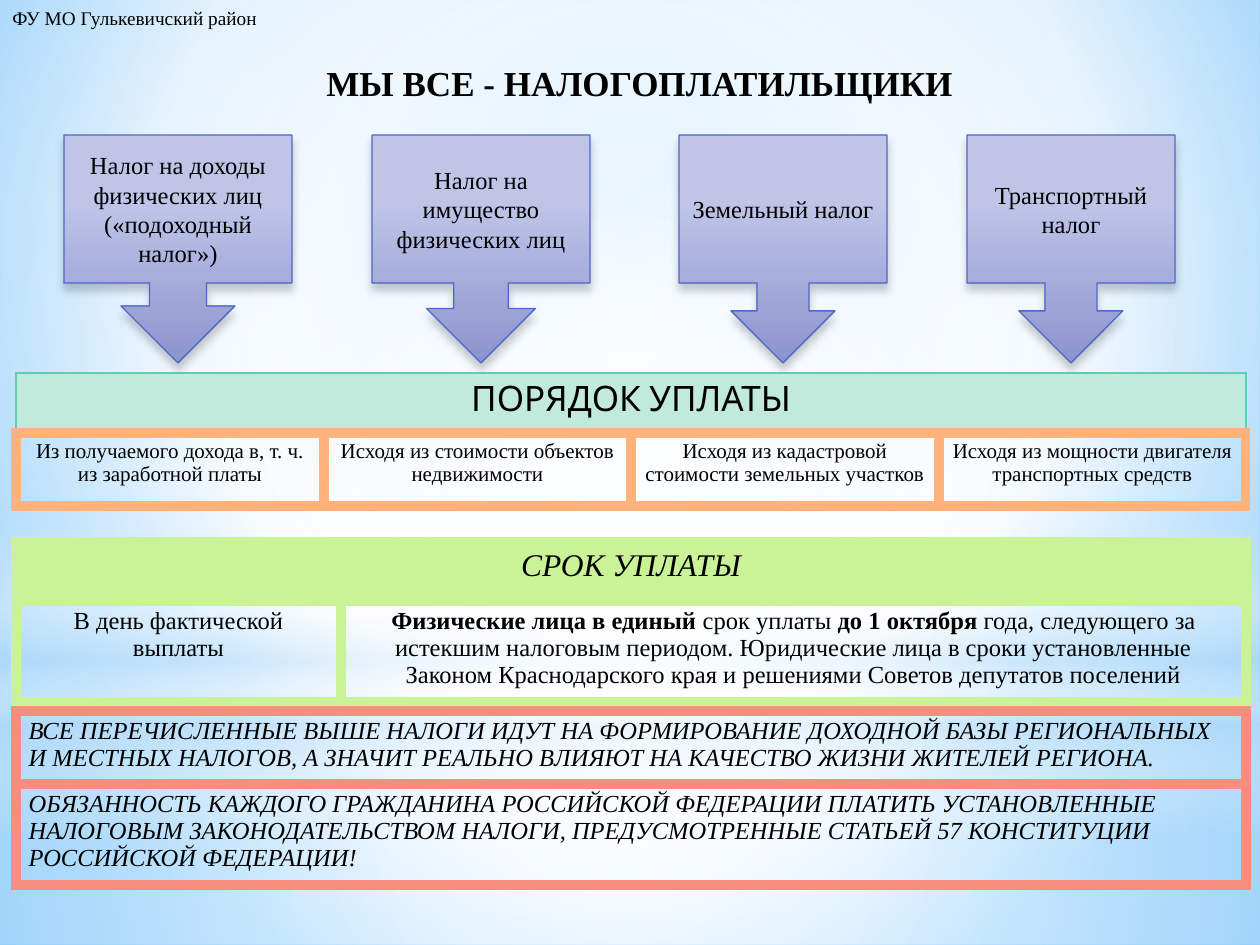
from dataclasses import dataclass
from typing import Any, NamedTuple

from pptx import Presentation
from pptx.dml.color import RGBColor as Rgb
from pptx.enum.shapes import MSO_SHAPE as Kind
from pptx.enum.text import MSO_ANCHOR as Anchor, MSO_AUTO_SIZE as Auto, PP_ALIGN as Align
from pptx.oxml import parse_xml
from pptx.oxml.ns import nsdecls, qn
from pptx.util import Emu, Pt


@dataclass(frozen=True)
class Theme:
    serif: str = "Times New Roman"
    sans: str = "Karla"
    ink: str = "000000"
    edge: str = "4E67C8"
    mint: str = "C1EADC"
    teal: str = "5DCEAF"
    peach: str = "FFB37A"
    lime: str = "CAF297"
    coral: str = "F78D7C"
    head: int = 20
    term: int = 18
    body: int = 14
    small: int = 12
    note: int = 11


T = Theme()
SCALE = 914400 / 126
LEFT, WIDE = 16, 1230


class Box(NamedTuple):
    x: int
    y: int
    w: int
    h: int


class Stop(NamedTuple):
    at: int
    color: str
    alpha: int = 100


class Layer(NamedTuple):
    kind: Any
    box: Box
    stops: list[Stop]
    way: str


class Tax(NamedTuple):
    x: int
    w: int
    text: str


@dataclass(frozen=True)
class Grid:
    y: int
    cols: list[int]
    rows: list[int]
    texts: list[str]
    edge: str
    line: float = 6
    size: int = T.body
    font: str = T.serif
    fill: str | None = None
    italic: bool = False
    align: Any = Align.CENTER


def px(n: int) -> Emu:
    return Emu(round(n * SCALE))


def place(box: Box) -> list[Emu]:
    return [px(n) for n in box]


def radial(l: int, t: int, r: int, b: int) -> str:
    return (f'<a:path path="circle"><a:fillToRect l="{l}000" t="{t}000" '
            f'r="{r}000" b="{b}000"/></a:path>')


DOWN = '<a:lin ang="5400000" scaled="0"/>'
MID = radial(50, 50, 50, 50)


def blend(root: Any, stops: list[Stop], way: str) -> None:
    marks = "".join(
        f'<a:gs pos="{s.at}000"><a:srgbClr val="{s.color}">'
        f'<a:alpha val="{s.alpha}000"/></a:srgbClr></a:gs>' for s in stops)
    new = parse_xml(f'<a:gradFill {nsdecls("a")} rotWithShape="1">'
                    f'<a:gsLst>{marks}</a:gsLst>{way}</a:gradFill>')
    old = next(root.iter(qn("a:noFill")))
    old.getparent().replace(old, new)


def style(par: Any, size: int, font: str = T.serif, bold: bool | None = None,
          italic: bool = False) -> None:
    par.font.size, par.font.name = Pt(size), font
    par.font.bold, par.font.italic = bold, italic
    par.font.color.rgb = Rgb.from_string(T.ink)


def label(slide: Any, box: Box, text: str, size: int, bold: bool = False) -> None:
    frame = slide.shapes.add_textbox(*place(box)).text_frame
    frame.word_wrap, frame.auto_size = False, Auto.SHAPE_TO_FIT_TEXT
    frame.text = text
    style(frame.paragraphs[0], size, bold=bold)


def paint(slide: Any, layer: Layer) -> Any:
    shape = slide.shapes.add_shape(layer.kind, *place(layer.box))
    shape.shadow.inherit = False
    shape.fill.background()
    blend(shape.element.spPr, layer.stops, layer.way)
    shape.line.fill.background()
    return shape


def callout(slide: Any, tax: Tax) -> None:
    shape = paint(slide, Layer(Kind.DOWN_ARROW_CALLOUT, Box(tax.x, 135, tax.w, 228),
                               [Stop(28, "C0C5E8"), Stop(100, "8C94CE")], DOWN))
    shape.line.color.rgb = Rgb.from_string(T.edge)
    shape.line.width = Pt(0.75)
    shape.element.spPr.find(qn("a:effectLst")).append(parse_xml(
        f'<a:outerShdw {nsdecls("a")} blurRad="63500" dist="50800" dir="5400000" '
        'rotWithShape="0"><a:srgbClr val="000000"><a:alpha val="20000"/>'
        '</a:srgbClr></a:outerShdw>'))
    frame = shape.text_frame
    frame.word_wrap, frame.vertical_anchor = True, Anchor.MIDDLE
    frame.text = tax.text
    frame.paragraphs[0].alignment = Align.CENTER
    style(frame.paragraphs[0], T.body)


def border(cell: Any, color: str, width: float) -> None:
    props = cell._tc.get_or_add_tcPr()
    for i, side in enumerate("LRTB"):
        props.insert(i, parse_xml(
            f'<a:ln{side} {nsdecls("a")} w="{Pt(width)}"><a:solidFill>'
            f'<a:srgbClr val="{color}"/></a:solidFill></a:ln{side}>'))


def table(slide: Any, grid: Grid) -> None:
    box = Box(LEFT, grid.y, sum(grid.cols), sum(grid.rows))
    tab = slide.shapes.add_table(len(grid.rows), len(grid.cols), *place(box)).table
    tab.first_row = tab.horz_banding = False
    for col, w in zip(tab.columns, grid.cols):
        col.width = px(w)
    for row, h in zip(tab.rows, grid.rows):
        row.height = px(h)
    for cell, text in zip(tab.iter_cells(), grid.texts):
        if grid.fill:
            cell.fill.solid()
            cell.fill.fore_color.rgb = Rgb.from_string(grid.fill)
        else:
            cell.fill.background()
        border(cell, grid.edge, grid.line)
        par = cell.text_frame.paragraphs[0]
        par.alignment = grid.align
        style(par, grid.size, grid.font, italic=grid.italic)
        for i, part in enumerate(text.split("*")):
            if part:
                run = par.add_run()
                run.text, run.font.bold = part, i % 2 == 1


LAYERS = [
    Layer(Kind.RECTANGLE, Box(0, 703, 1260, 242),
          [Stop(0, "FFFFFF", 91), Stop(37, "FFFFFF", 76), Stop(100, "B4DCFA", 79)], MID),
    Layer(Kind.RECTANGLE, Box(0, 0, 1260, 703),
          [Stop(0, "FFFFFF", 89), Stop(48, "FFFFFF", 62), Stop(100, "B4DCFA", 79)], MID),
    Layer(Kind.RECTANGLE, Box(0, 519, 1260, 315),
          [Stop(0, "FFFFFF", 0), Stop(29, "FFFFFF", 30), Stop(45, "B4DCFA", 40),
           Stop(55, "FFFFFF", 26), Stop(65, "B4DCFA", 60), Stop(100, "FFFFFF", 0)], DOWN),
    Layer(Kind.OVAL, Box(0, 220, 1260, 703),
          [Stop(0, "FFFFFF"), Stop(56, "FFFFFF", 0)], MID),
]
TAXES = [
    Tax(64, 228, "Налог на доходы физических лиц («подоходный налог»)"),
    Tax(372, 218, "Налог на имущество физических лиц"),
    Tax(679, 208, "Земельный налог"),
    Tax(967, 208, "Транспортный налог"),
]
GRIDS = [
    Grid(373, [WIDE], [59], ["ПОРЯДОК УПЛАТЫ"], T.teal, 0.75, T.head, T.sans, T.mint),
    Grid(433, [308, 307, 308, 307], [73],
         ["Из получаемого дохода в, т. ч. из заработной платы",
          "Исходя из стоимости объектов недвижимости",
          "Исходя из кадастровой стоимости земельных участков",
          "Исходя из мощности двигателя транспортных средств"], T.peach, size=T.small),
    Grid(542, [WIDE], [50], ["СРОК УПЛАТЫ"], T.lime, size=T.term, fill=T.lime, italic=True),
    Grid(601, [325, 905], [101],
         ["В день фактической выплаты",
          "*Физические лица в единый* срок уплаты *до 1 октября* года, следующего за "
          "истекшим налоговым периодом. Юридические лица в сроки установленные Законом "
          "Краснодарского края и решениями Советов депутатов поселений"], T.lime),
    Grid(711, [WIDE], [73, 101],
         ["ВСЕ ПЕРЕЧИСЛЕННЫЕ ВЫШЕ НАЛОГИ ИДУТ НА ФОРМИРОВАНИЕ ДОХОДНОЙ БАЗЫ РЕГИОНАЛЬНЫХ "
          "И МЕСТНЫХ НАЛОГОВ, А ЗНАЧИТ РЕАЛЬНО ВЛИЯЮТ НА КАЧЕСТВО ЖИЗНИ ЖИТЕЛЕЙ РЕГИОНА.",
          "ОБЯЗАННОСТЬ КАЖДОГО ГРАЖДАНИНА РОССИЙСКОЙ ФЕДЕРАЦИИ ПЛАТИТЬ УСТАНОВЛЕННЫЕ "
          "НАЛОГОВЫМ ЗАКОНОДАТЕЛЬСТВОМ НАЛОГИ, ПРЕДУСМОТРЕННЫЕ СТАТЬЕЙ 57 КОНСТИТУЦИИ "
          "РОССИЙСКОЙ ФЕДЕРАЦИИ!"], T.coral, italic=True, align=Align.LEFT),
]


def main() -> None:
    deck = Presentation()
    deck.slide_width, deck.slide_height = px(1260), px(945)
    slide = deck.slides.add_slide(deck.slide_layouts[6])
    slide.background.fill.background()
    blend(slide.element, [Stop(0, "9ED5FF"), Stop(60, "FFFFFF"), Stop(100, "5BB9FF")],
          radial(20, 10, 20, 60))
    for layer in LAYERS:
        paint(slide, layer)
    label(slide, Box(314, 55, 656, 55), "МЫ ВСЕ - НАЛОГОПЛАТИЛЬЩИКИ", T.head, True)
    for tax in TAXES:
        callout(slide, tax)
    for grid in GRIDS:
        table(slide, grid)
    label(slide, Box(0, 0, 275, 37), "ФУ МО Гулькевичский район", T.note)
    deck.save("out.pptx")


if __name__ == "__main__":
    main()
